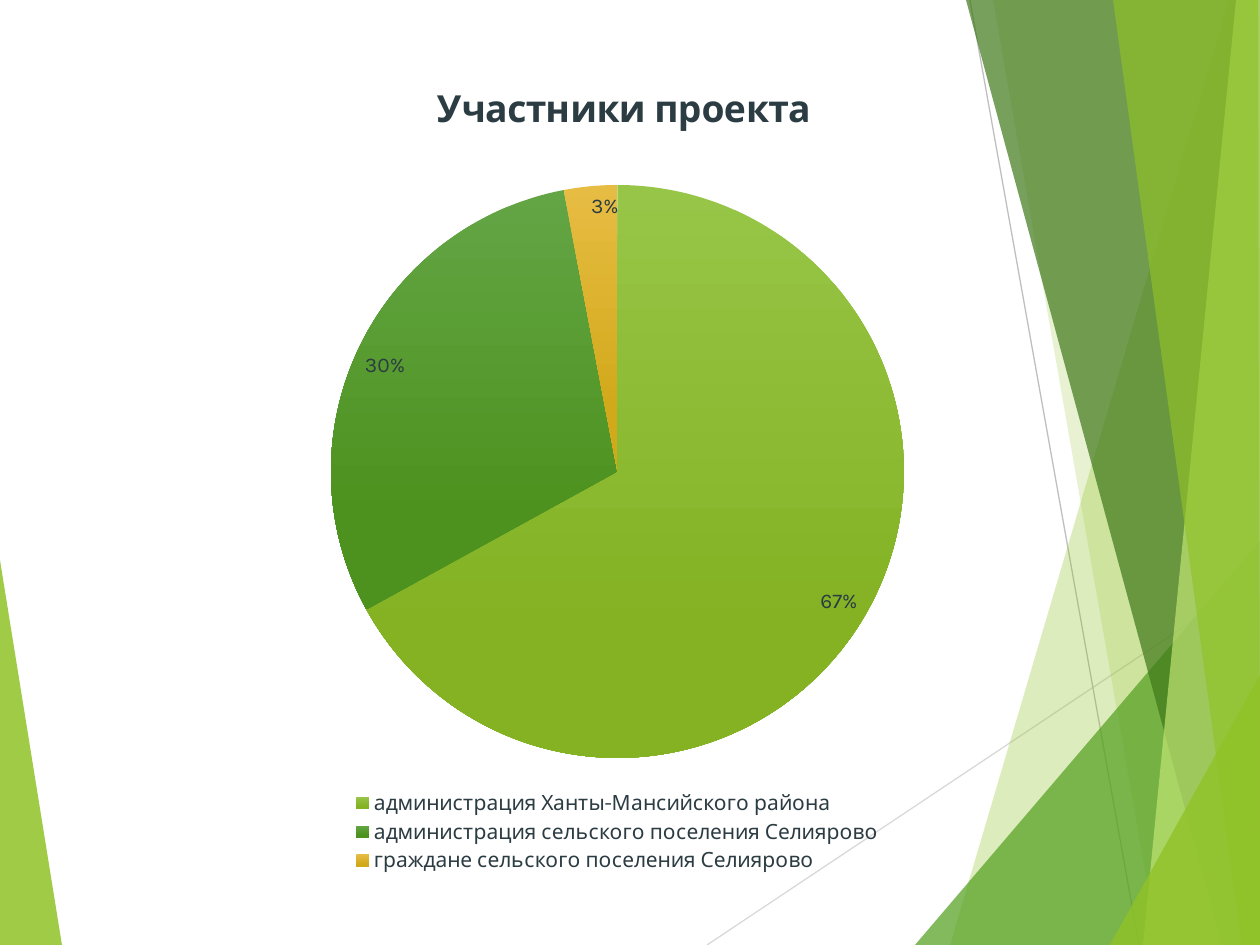
from lxml import etree
from pptx import Presentation
from pptx.chart.data import CategoryChartData
from pptx.dml.color import RGBColor
from pptx.enum.chart import XL_CHART_TYPE as ChartType
from pptx.enum.chart import XL_LABEL_POSITION as LabelPosition
from pptx.enum.chart import XL_LEGEND_POSITION as LegendPosition
from pptx.enum.shapes import MSO_CONNECTOR as Connector
from pptx.oxml.ns import qn
from pptx.util import Emu, Pt

PX = 914400 / 126
WIDTH, HEIGHT = 1260, 945
FONT = "Karla"
COLORS = {
    "lime": "90C226", "green": "54A021", "forest": "3F7819", "pale": "C0E474",
    "line_light": "D9D9D9", "line_dark": "BFBFBF", "text": "2C3C43",
}

# Background facets, back to front: colour, opacity in percent, corners
LEFT_FACET = ("lime", 85, [(0, 560), (62, 945), (0, 945)])
RIGHT_FACETS = [
    ("lime", 30, [(1229, 0), (950, 945), (1260, 945), (1260, 0)]),
    ("lime", 20, [(993, 0), (1158, 945), (1260, 945), (1260, 0)]),
    ("green", 72, [(915, 945), (1260, 541), (1260, 945)]),
    ("forest", 70, [(966, 0), (1222, 945), (1260, 945), (1260, 0)]),
    ("pale", 70, [(1236, 0), (1143, 945), (1260, 945), (1260, 0)]),
    ("lime", 65, [(1113, 0), (1242, 945), (1260, 945), (1258, 0)]),
    ("lime", 80, [(1110, 945), (1260, 675), (1260, 945)]),
]
LINES = [
    ("line_light", (707, 945), (1260, 576)),
    ("line_dark", (970, 0), (1139, 945)),
]

# Chart: category, value, gradient from top to bottom
TITLE = "Участники проекта"
SLICES = [
    ("администрация Ханты-Мансийского района", 0.67, ("97C547", "84B223")),
    ("администрация сельского поселения Селиярово", 0.3, ("63A545", "4D921E")),
    ("граждане сельского поселения Селиярово", 0.03, ("E7BC43", "D2A91B")),
]
CHART_BOX = (118, 47, 998, 833)
PIE_BOX = (331, 185, 573, 573)
TITLE_CORNER = (430, 77)
LEGEND_BOX = (350, 787, 535, 90)


def px(value):
    return Emu(round(value * PX))


def color(name):
    return RGBColor.from_string(COLORS[name])


def add_facet(slide, name, opacity, corners):
    start, *others = corners
    builder = slide.shapes.build_freeform(*start, scale=PX)
    builder.add_line_segments(others, close=True)
    shape = builder.convert_to_shape()
    shape.shadow.inherit = False
    shape.fill.solid()
    shape.fill.fore_color.rgb = color(name)
    shape.line.fill.background()
    tint = shape.fill._xPr.find(".//" + qn("a:srgbClr"))
    etree.SubElement(tint, qn("a:alpha"), val=str(opacity * 1000))


def add_line(slide, name, start, end):
    line = slide.shapes.add_connector(Connector.STRAIGHT, *map(px, start + end))
    line.line.color.rgb = color(name)
    line.line.width = Pt(0.75)
    etree.SubElement(line._element.spPr, qn("a:effectLst"))


def set_font(font, size, bold=False):
    font.name = FONT
    font.size = Pt(size)
    font.bold = bold
    font.color.rgb = color("text")


def place(element, index, box, inner=False):
    """Give a chart part a fixed place, as fractions of the chart frame."""
    for old in element.findall(qn("c:layout")):
        element.remove(old)
    layout = etree.Element(qn("c:layout"))
    manual = etree.SubElement(layout, qn("c:manualLayout"))
    if inner:
        etree.SubElement(manual, qn("c:layoutTarget"), val="inner")
    for mode in ("xMode", "yMode"):
        etree.SubElement(manual, qn("c:" + mode), val="edge")
    left, top, width, height = CHART_BOX
    for key, value, origin, extent in zip(
            "xywh", box, (left, top, 0, 0), (width, height, width, height)):
        etree.SubElement(manual, qn("c:" + key),
                         val=f"{(value - origin) / extent:.4f}")
    element.insert(index, layout)


def add_pie(slide):
    data = CategoryChartData(number_format="0%")
    data.categories = [category for category, _, _ in SLICES]
    data.add_series(TITLE, [value for _, value, _ in SLICES])
    chart = slide.shapes.add_chart(
        ChartType.PIE, *map(px, CHART_BOX), data).chart
    set_font(chart.font, 12)

    # Title and legend
    chart.has_title = True
    title = chart.chart_title
    title.text_frame.text = TITLE
    set_font(title.text_frame.paragraphs[0].font, 21.3, bold=True)
    place(title._element, 1, TITLE_CORNER)
    chart.has_legend = True
    legend = chart.legend
    legend.position = LegendPosition.BOTTOM
    legend.include_in_layout = False
    set_font(legend.font, 12)
    place(legend._element, 1, LEGEND_BOX)

    # Slices and labels
    plot = chart.plots[0]
    plot.vary_by_categories = True
    place(chart._chartSpace.chart.plotArea, 0, PIE_BOX, inner=True)
    for index, (_, _, shades) in enumerate(SLICES):
        slice_format = plot.series[0].points[index].format
        slice_format.line.fill.background()
        fill = slice_format.fill
        fill.gradient()
        fill.gradient_angle = 270
        for stop, shade, position in zip(fill.gradient_stops, shades, (0, 0.78)):
            stop.color.rgb = RGBColor.from_string(shade)
            stop.position = position
    plot.has_data_labels = True
    labels = plot.data_labels
    labels.show_value = True
    labels.show_percentage = False
    labels.number_format = "0%"
    labels.number_format_is_linked = False
    labels.position = LabelPosition.INSIDE_END
    set_font(labels.font, 12)


def main():
    presentation = Presentation()
    presentation.slide_width, presentation.slide_height = px(WIDTH), px(HEIGHT)
    slide = presentation.slides.add_slide(presentation.slide_layouts[6])

    # Background
    add_facet(slide, *LEFT_FACET)
    for line in LINES:
        add_line(slide, *line)
    for facet in RIGHT_FACETS:
        add_facet(slide, *facet)

    add_pie(slide)
    presentation.save("out.pptx")


if __name__ == "__main__":
    main()
